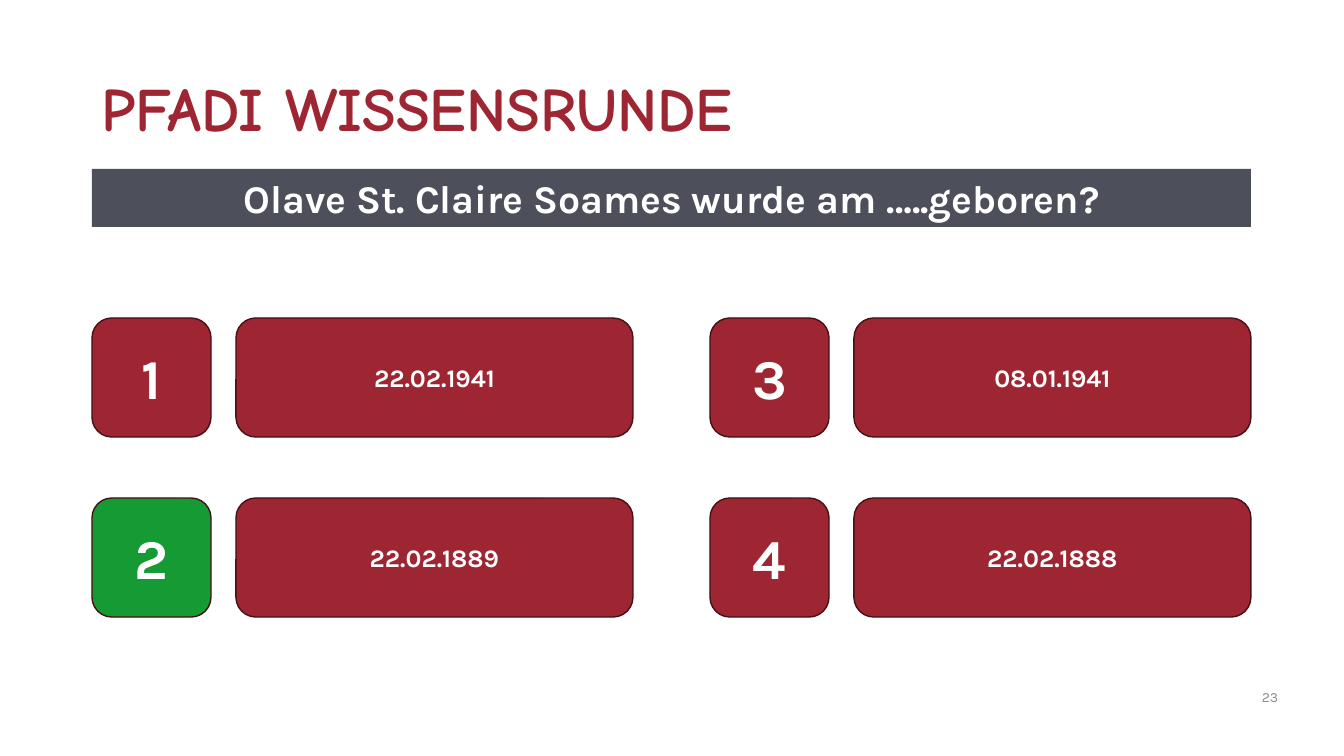
from pptx import Presentation
from pptx.dml.color import RGBColor
from pptx.enum.shapes import MSO_SHAPE
from pptx.enum.text import MSO_ANCHOR, MSO_AUTO_SIZE, PP_ALIGN
from pptx.util import Emu, Pt

RED = RGBColor(0x9D, 0x26, 0x32)
DARK_RED = RGBColor(0x45, 0x11, 0x16)
GREEN = RGBColor(0x15, 0x9A, 0x34)
SLATE = RGBColor(0x4D, 0x4F, 0x5A)
GREY = RGBColor(0x8C, 0x8C, 0x8C)
WHITE = RGBColor(0xFF, 0xFF, 0xFF)

LEFT, WIDTH = 92, 1159
TILE, ANSWER_WIDTH = 119, 397
ANSWER_OFFSET = 144
COLUMN_STEP, ROW_STEP = 618, 180
GRID_TOP = 318
ANSWERS = ["22.02.1941", "22.02.1889", "08.01.1941", "22.02.1888"]
CORRECT = 2


def px(n):
    return Emu(round(n * 914400 / 100.8))


def write(sp, text, size, color, font="Karla", bold=True, align=PP_ALIGN.CENTER):
    tf = sp.text_frame
    tf.word_wrap = True
    tf.vertical_anchor = MSO_ANCHOR.MIDDLE
    p = tf.paragraphs[0]
    p.text = text
    p.alignment = align
    p.font.name = font
    p.font.size = Pt(size)
    p.font.bold = bold
    p.font.color.rgb = color
    return tf


def add_label(s, x, y, w, h, text, size, color, font="Karla", bold=False):
    sp = s.shapes.add_textbox(px(x), px(y), px(w), px(h))
    return write(sp, text, size, color, font, bold, PP_ALIGN.LEFT)


def add_block(s, kind, x, y, w, h, fill, text, size):
    sp = s.shapes.add_shape(kind, px(x), px(y), px(w), px(h))
    sp.shadow.inherit = False
    sp.fill.solid()
    sp.fill.fore_color.rgb = fill
    write(sp, text, size, WHITE)
    return sp


def add_question(s, text):
    sp = add_block(s, MSO_SHAPE.RECTANGLE, LEFT, 169, WIDTH, 58, SLATE, text, 28)
    sp.line.fill.background()
    sp.text_frame.vertical_anchor = MSO_ANCHOR.TOP
    sp.text_frame.auto_size = MSO_AUTO_SIZE.SHAPE_TO_FIT_TEXT


def add_tile(s, x, y, w, fill, text, size):
    sp = add_block(s, MSO_SHAPE.ROUNDED_RECTANGLE, x, y, w, TILE, fill, text, size)
    sp.line.color.rgb = DARK_RED
    sp.line.width = Pt(1)


def add_answer(s, number, text):
    column, row = divmod(number - 1, 2)
    x = LEFT + column * COLUMN_STEP
    y = GRID_TOP + row * ROW_STEP
    add_tile(s, x, y, TILE, GREEN if number == CORRECT else RED, str(number), 40)
    add_tile(s, x + ANSWER_OFFSET, y, ANSWER_WIDTH, RED, text, 18)


def main():
    prs = Presentation()
    prs.slide_width, prs.slide_height = px(1344), px(756)
    s = prs.slides.add_slide(prs.slide_layouts[6])
    title = add_label(s, LEFT, 39, WIDTH, 146, "PFADI WISSENSRUNDE", 44, RED, "Comic Neue", True)
    title.paragraphs[0].line_spacing = 0.9
    add_label(s, 1252, 677, 92, 40, "23", 10, GREY)
    add_question(s, "Olave St. Claire Soames wurde am …..geboren?")
    for number, text in enumerate(ANSWERS, 1):
        add_answer(s, number, text)
    prs.save("out.pptx")


if __name__ == "__main__":
    main()
